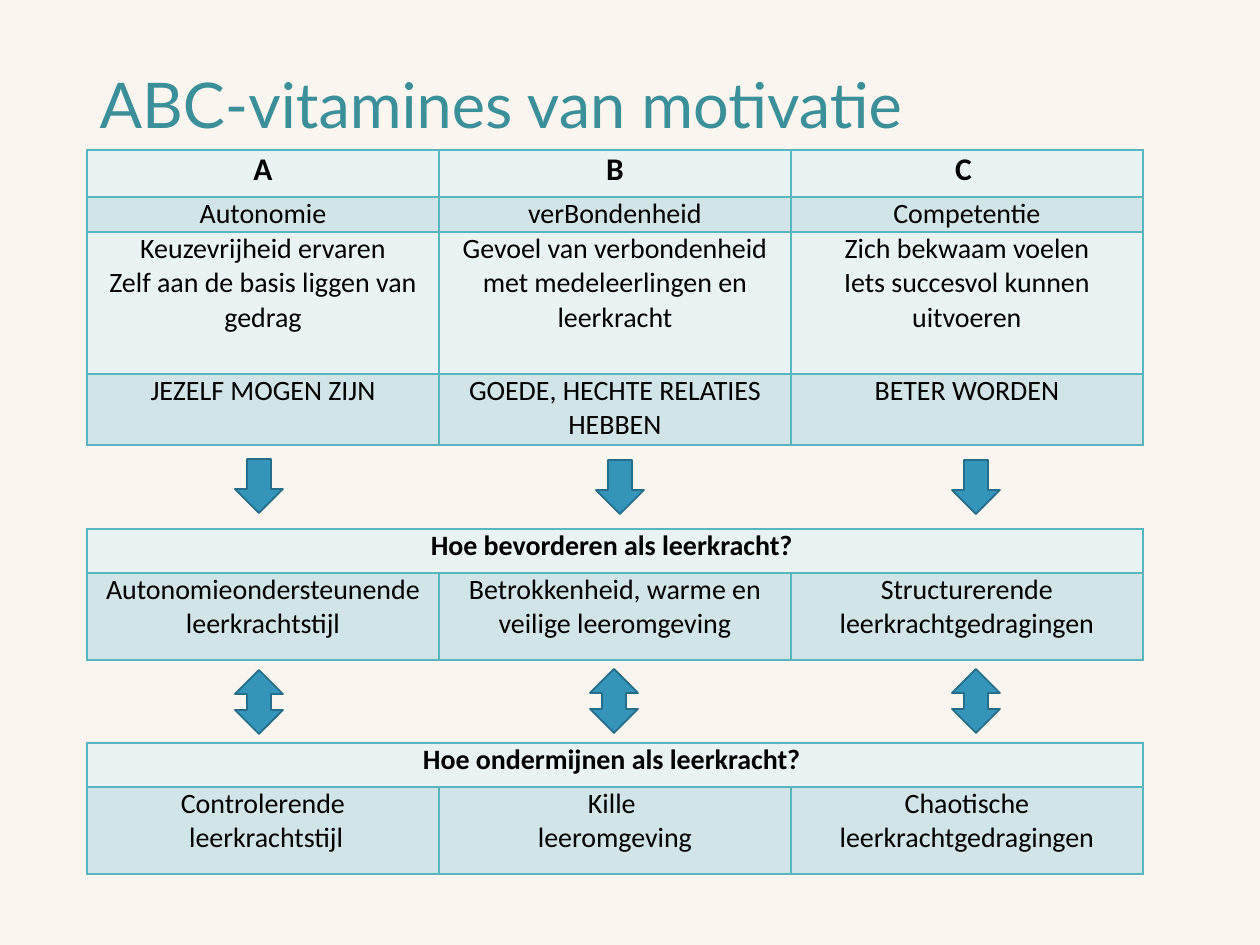
from lxml.etree import SubElement
from pptx import Presentation
from pptx.dml.color import RGBColor
from pptx.enum.shapes import MSO_SHAPE
from pptx.enum.text import MSO_ANCHOR, MSO_AUTO_SIZE, PP_ALIGN
from pptx.oxml.ns import qn
from pptx.util import Pt

SCALE = 914400 / 126
CREAM = RGBColor(0xFA, 0xF6, 0xEF)
TEAL = RGBColor(0x3A, 0x8F, 0x98)
BLACK = RGBColor(0x00, 0x00, 0x00)
PALE = RGBColor(0xEA, 0xF3, 0xF4)
MIST = RGBColor(0xD1, 0xE5, 0xE8)
BORDER = RGBColor(0x58, 0xB6, 0xC0)
BLUE = RGBColor(0x34, 0x94, 0xBA)
NAVY = RGBColor(0x26, 0x6D, 0x8A)

LEFT, COL = 87, 352
VITAMINS = [
    ["A", "B", "C "],
    ["Autonomie", "verBondenheid", "Competentie"],
    ["Keuzevrijheid ervaren\nZelf aan de basis liggen van gedrag",
     "Gevoel van verbondenheid met medeleerlingen en leerkracht",
     "Zich bekwaam voelen\nIets succesvol kunnen uitvoeren"],
    ["JEZELF MOGEN ZIJN", "GOEDE, HECHTE RELATIES HEBBEN", "BETER WORDEN"],
]
PROMOTE = [
    ["Hoe bevorderen als leerkracht? "],
    ["Autonomieondersteunende leerkrachtstijl",
     "Betrokkenheid, warme en veilige leeromgeving",
     "Structurerende leerkrachtgedragingen"],
]
UNDERMINE = [
    ["Hoe ondermijnen als leerkracht? "],
    ["Controlerende\v leerkrachtstijl", "Kille \vleeromgeving",
     "Chaotische leerkrachtgedragingen"],
]


def px(n):
    return round(n * SCALE)


class Deck:
    """Holds the style and the current slide, and draws each kind of element."""

    def __init__(self, width, height):
        self.prs = Presentation()
        self.prs.slide_width, self.prs.slide_height = px(width), px(height)
        self.title_font, self.body_font = "Lato", "Calibri"

    def slide(self):
        self.s = self.prs.slides.add_slide(self.prs.slide_layouts[5])
        fill = self.s.background.fill
        fill.solid()
        fill.fore_color.rgb = CREAM

    def format(self, p, align, font, size, color, bold=False):
        p.alignment = align
        for r in p.runs:
            f = r.font
            f.name, f.size, f.bold = font, Pt(size), bold
            f.color.rgb = color

    def title(self, text, x, y, w, h):
        sp = self.s.shapes.title
        sp.left, sp.top, sp.width, sp.height = map(px, (x, y, w, h))
        tf = sp.text_frame
        tf.text = text
        tf.auto_size = MSO_AUTO_SIZE.NONE
        tf.vertical_anchor = MSO_ANCHOR.MIDDLE
        tf.paragraphs[0].line_spacing = 0.9
        self.format(tf.paragraphs[0], PP_ALIGN.LEFT, self.title_font, 36, TEAL)

    def borders(self, cell):
        tcPr = cell._tc.get_or_add_tcPr()
        for i, side in enumerate(("a:lnL", "a:lnR", "a:lnT", "a:lnB")):
            ln = SubElement(tcPr, qn(side), w=str(Pt(1)))
            fill = SubElement(ln, qn("a:solidFill"))
            SubElement(fill, qn("a:srgbClr"), val=str(BORDER))
            tcPr.insert(i, ln)

    def table(self, rows, y, heights, head_size=16):
        cols = len(rows[-1])
        frame = self.s.shapes.add_table(len(rows), cols, px(LEFT), px(y),
                                        px(COL * cols), px(sum(heights)))
        tbl = frame.table
        tbl.horz_banding = False
        for col in tbl.columns:
            col.width = px(COL)
        for i, (texts, height) in enumerate(zip(rows, heights)):
            tbl.rows[i].height = px(height)
            for j in range(cols):
                cell = tbl.cell(i, j)
                cell.margin_left = cell.margin_right = px(9)
                cell.margin_top = cell.margin_bottom = 0
                cell.fill.solid()
                cell.fill.fore_color.rgb = MIST if i % 2 else PALE
                self.borders(cell)
            if len(texts) < cols:
                tbl.cell(i, 0).merge(tbl.cell(i, cols - 1))
            for j, text in enumerate(texts):
                tf = tbl.cell(i, j).text_frame
                tf.text = text
                for p in tf.paragraphs:
                    self.format(p, PP_ALIGN.CENTER, self.body_font,
                                16 if i else head_size, BLACK, i == 0)

    def arrow(self, kind, x, y, h):
        sp = self.s.shapes.add_shape(kind, px(x), px(y), px(48), px(h))
        sp.shadow.inherit = False
        sp.fill.solid()
        sp.fill.fore_color.rgb = BLUE
        sp.line.color.rgb = NAVY
        sp.line.width = Pt(1)


def main():
    deck = Deck(1260, 945)
    deck.slide()
    deck.title("ABC-vitamines van motivatie", LEFT, 50, 1086, 117)
    deck.table(PROMOTE, 529, [44, 87])
    deck.table(VITAMINS, 150, [47, 35, 142, 71], head_size=18)
    deck.table(UNDERMINE, 743, [44, 87])
    for x, y in ((235, 670), (590, 669), (952, 669)):
        deck.arrow(MSO_SHAPE.UP_DOWN_ARROW, x, y, 64)
    for x, y in ((235, 459), (596, 460), (952, 460)):
        deck.arrow(MSO_SHAPE.DOWN_ARROW, x, y, 54)
    deck.prs.save("out.pptx")


if __name__ == "__main__":
    main()
